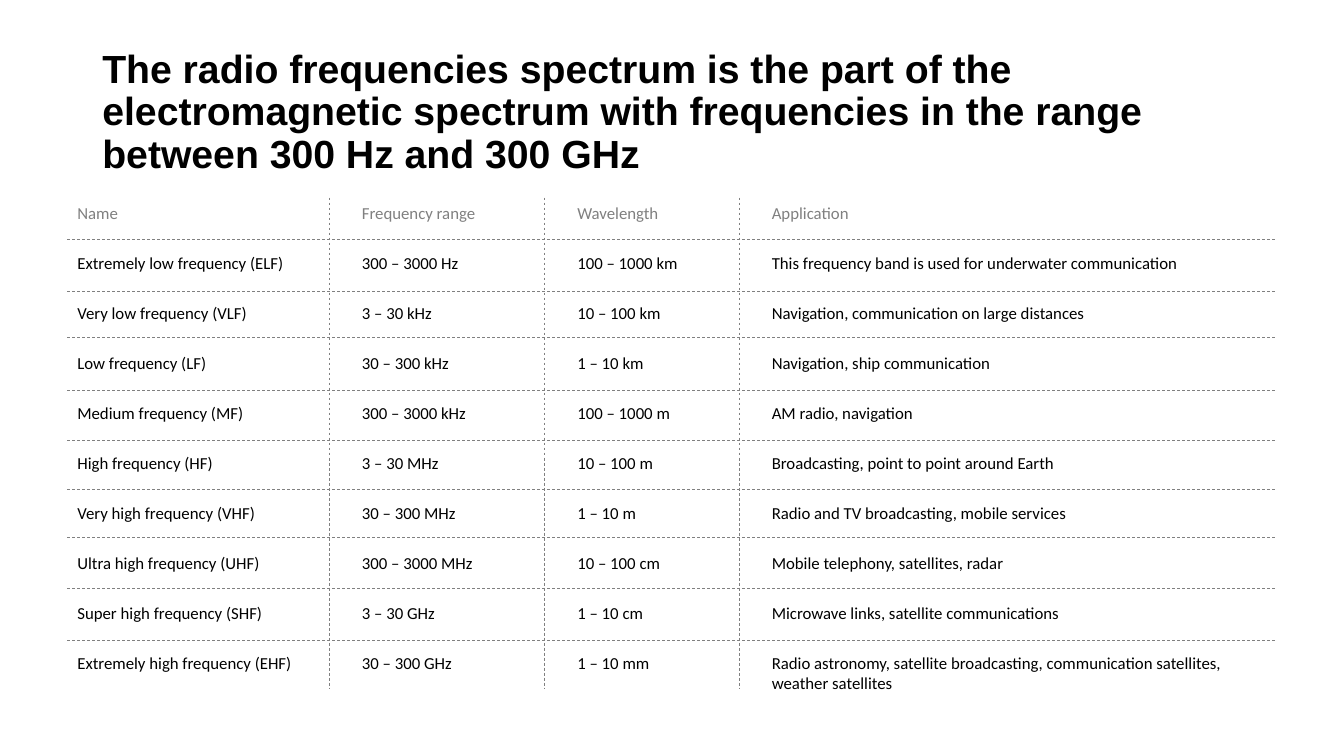
from lxml import etree
from pptx import Presentation
from pptx.dml.color import RGBColor
from pptx.enum.dml import MSO_LINE
from pptx.enum.shapes import MSO_CONNECTOR
from pptx.enum.text import MSO_ANCHOR as ANCHOR
from pptx.oxml.ns import qn
from pptx.util import Cm, Pt

BLACK = RGBColor(0x00, 0x00, 0x00)
GRAY = RGBColor(0x80, 0x80, 0x80)

# Grid, in centimetres
LEFT, RIGHT = 1.7, 32.18
TOP, BOTTOM = 4.98, 17.35
ROW_PITCH, ROW_HEIGHT = 1.26, 0.78
COLUMN_RULES = [8.31, 13.73, 18.62]
ROW_RULES = [6.02, 7.33, 8.51, 9.83, 11.1, 12.32, 13.54, 14.83, 16.13]

# Each column: left, width, heading, entries
COLUMNS = [
    (1.7, 6.25, "Name", [
        "Extremely low frequency (ELF)",
        "Very low frequency (VLF)",
        "Low frequency (LF)",
        "Medium frequency (MF)",
        "High frequency (HF)",
        "Very high frequency (VHF)",
        "Ultra high frequency (UHF)",
        "Super high frequency (SHF)",
        "Extremely high frequency (EHF)",
    ]),
    (8.87, 4.02, "Frequency range", [
        "300 – 3000 Hz",
        "3 – 30 kHz",
        "30 – 300 kHz",
        "300 – 3000 kHz",
        "3 – 30 MHz",
        "30 – 300 MHz",
        "300 – 3000 MHz",
        "3 – 30 GHz",
        "30 – 300 GHz",
    ]),
    (14.3, 4.02, "Wavelength", [
        "100 – 1000 km",
        "10 – 100 km",
        "1 – 10 km",
        "100 – 1000 m",
        "10 – 100 m",
        "1 – 10 m",
        "10 – 100 cm",
        "1 – 10 cm",
        "1 – 10 mm",
    ]),
    (19.2, 12.98, "Application", [
        "This frequency band is used for underwater communication",
        "Navigation, communication on large distances",
        "Navigation, ship communication",
        "AM radio, navigation",
        "Broadcasting, point to point around Earth",
        "Radio and TV broadcasting, mobile services",
        "Mobile telephony, satellites, radar",
        "Microwave links, satellite communications",
        "Radio astronomy, satellite broadcasting, communication satellites, "
        "weather satellites",
    ]),
]


class SlideBuilder:
    """Holds the text and line style and the slide being filled."""

    title_font, title_size = "Arial", Pt(28)
    body_font, body_size = "Calibri", Pt(12)
    rule_width = Pt(0.5)

    def __init__(self, slide):
        self.slide = slide

    def text_box(self, text, left, top, width, height, font, size, color):
        sp = self.slide.shapes.add_textbox(Cm(left), Cm(top), Cm(width), Cm(height))
        tf = sp.text_frame
        tf.word_wrap = True
        tf.text = text
        r = tf.paragraphs[0].runs[0]
        r.font.name, r.font.size = font, size
        r.font.color.rgb = color
        return tf

    def title(self, text, left, top, width, height):
        tf = self.text_box(text, left, top, width, height,
                           self.title_font, self.title_size, BLACK)
        tf.vertical_anchor = ANCHOR.MIDDLE
        p = tf.paragraphs[0]
        p.line_spacing = 0.9
        p.runs[0].font.bold = True

    def cell(self, text, left, top, width, color):
        self.text_box(text, left, top, width, ROW_HEIGHT,
                      self.body_font, self.body_size, color)

    def rule(self, x1, y1, x2, y2):
        line = self.slide.shapes.add_connector(
            MSO_CONNECTOR.STRAIGHT, Cm(x1), Cm(y1), Cm(x2), Cm(y2))
        line.line.color.rgb = GRAY
        line.line.width = self.rule_width
        line.line.dash_style = MSO_LINE.DASH
        etree.SubElement(line._element.spPr, qn("a:effectLst"))


def main():
    prs = Presentation()
    prs.slide_width, prs.slide_height = Cm(33.87), Cm(19.05)
    builder = SlideBuilder(prs.slides.add_slide(prs.slide_layouts[6]))

    # Title
    builder.title("The radio frequencies spectrum is the part of the electromagnetic "
                  "spectrum with frequencies in the range between 300 Hz and 300 GHz",
                  2.33, 1.01, 29.21, 3.68)

    # Frequency bands, with a gray heading over each column
    for left, width, heading, entries in COLUMNS:
        for row, text in enumerate([heading] + entries):
            builder.cell(text, left, TOP + row * ROW_PITCH, width,
                         BLACK if row else GRAY)

    # Dashed separators
    for x in COLUMN_RULES:
        builder.rule(x, TOP, x, BOTTOM)
    for y in ROW_RULES:
        builder.rule(LEFT, y, RIGHT, y)

    prs.save("out.pptx")


if __name__ == "__main__":
    main()
